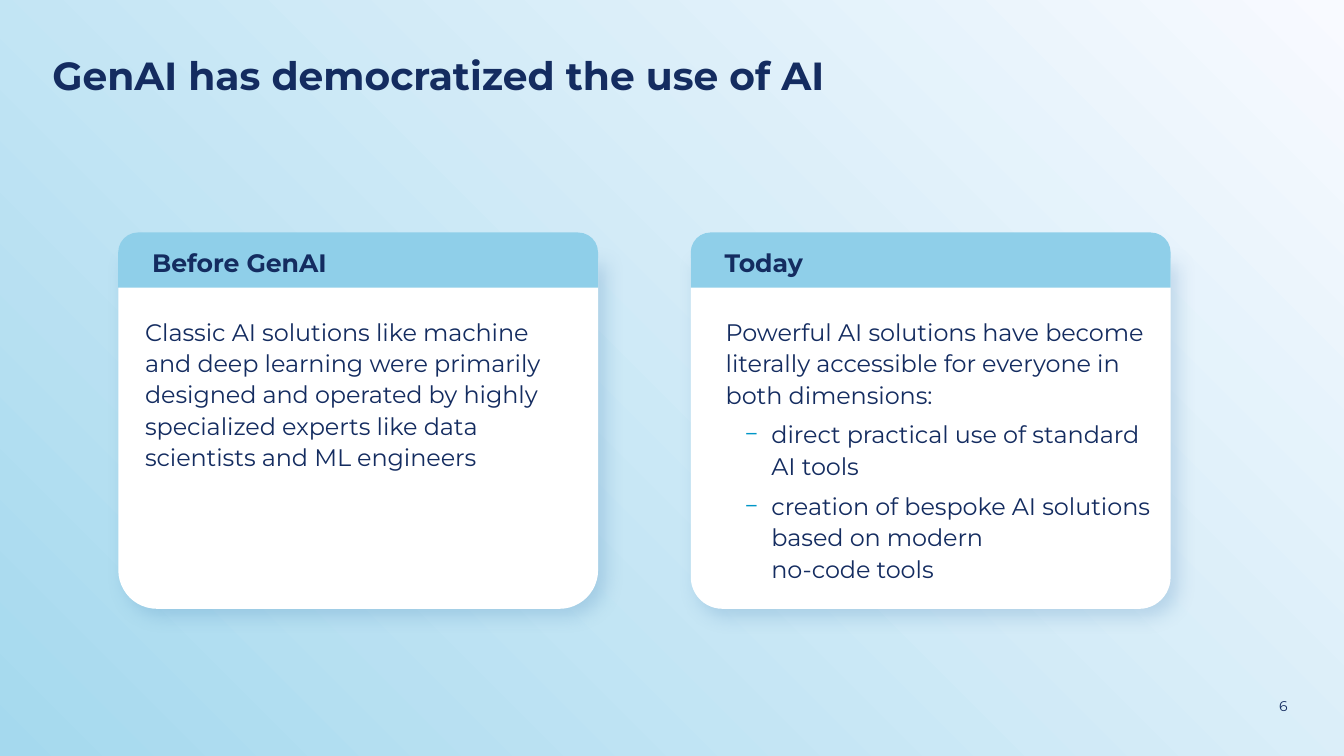
from dataclasses import dataclass

from lxml.etree import SubElement
from pptx import Presentation
from pptx.dml.color import RGBColor as RGB
from pptx.enum.shapes import MSO_SHAPE as Shape
from pptx.enum.text import MSO_ANCHOR as Anchor, PP_ALIGN as Align
from pptx.oxml import parse_xml
from pptx.oxml.ns import nsdecls, qn
from pptx.util import Inches, Pt


@dataclass(frozen=True)
class Theme:
    font: str = "Montserrat"
    ink: str = "142C60"
    band: str = "8FCFE9"
    card: str = "FFFFFF"
    bullet: str = "0096C7"
    shadow: str = "2166A4"
    sky: str = "A5D9EE"
    haze: str = "F8FAFF"
    title_size: float = 21
    heading_size: float = 13.5
    body_size: float = 12.75
    number_size: float = 7.5


class SlideBuilder:
    def __init__(self, slide, theme):
        self.slide = slide
        self.theme = theme

    def background(self):
        fill = self.slide.background.fill
        fill.gradient()
        fill.gradient_angle = 45
        for stop, color in zip(fill.gradient_stops, (self.theme.sky, self.theme.haze)):
            stop.color.rgb = RGB.from_string(color)

    def style(self, paragraph, size, bold=False):
        font = paragraph.font
        font.name = self.theme.font
        font.size = Pt(size)
        font.bold = bold
        font.color.rgb = RGB.from_string(self.theme.ink)

    def text(self, box, content, size, bold=False, align=Align.LEFT, anchor=Anchor.TOP):
        frame = self.frame(box, anchor)
        paragraph = frame.paragraphs[0]
        paragraph.text = content
        paragraph.alignment = align
        self.style(paragraph, size, bold)

    def frame(self, box, anchor=Anchor.TOP):
        """Add a wrapping text box without insets."""
        frame = self.slide.shapes.add_textbox(*map(Inches, box)).text_frame
        frame.word_wrap = True
        frame.vertical_anchor = anchor
        frame.margin_left = frame.margin_right = 0
        frame.margin_top = frame.margin_bottom = 0
        return frame

    def body(self, box, intro, points):
        frame = self.frame(box)
        for index, content in enumerate((intro, *points)):
            paragraph = frame.add_paragraph() if index else frame.paragraphs[0]
            paragraph.text = content
            paragraph.line_spacing = 1.1
            if index:
                paragraph.space_before = Pt(4.5)
                self.dash(paragraph)
            self.style(paragraph, self.theme.body_size)

    def dash(self, paragraph):
        properties = paragraph._p.get_or_add_pPr()
        properties.set("marL", str(Inches(0.34)))
        properties.set("indent", str(Inches(-0.2)))
        color = SubElement(properties, qn("a:buClr"))
        SubElement(color, qn("a:srgbClr"), val=self.theme.bullet)
        SubElement(properties, qn("a:buFont"), typeface=self.theme.font)
        SubElement(properties, qn("a:buChar"), char="−")

    def shape(self, kind, box, adjustments, fill=None):
        shape = self.slide.shapes.add_shape(kind, *map(Inches, box))
        shape.shadow.inherit = False
        shape.line.fill.background()
        for index, value in enumerate(adjustments):
            shape.adjustments[index] = value
        if fill:
            shape.fill.solid()
            shape.fill.fore_color.rgb = RGB.from_string(fill)
        else:
            shape.fill.background()
        return shape

    def drop_shadow(self, shape):
        effects = shape._element.spPr.find(qn("a:effectLst"))
        effects.append(parse_xml(
            f'<a:outerShdw {nsdecls("a")} blurRad="{Pt(10)}" dist="{Pt(5)}" '
            f'dir="2700000" algn="tl" rotWithShape="0">'
            f'<a:srgbClr val="{self.theme.shadow}"><a:alpha val="20000"/></a:srgbClr>'
            f'</a:outerShdw>'))

    def card(self, left, heading, corner):
        top, width = 1.73, 3.57
        panel = self.shape(Shape.ROUND_2_SAME_RECTANGLE, (left, 1.92, width, 2.61),
                           (corner, 0), self.theme.card)
        panel.rotation = 180
        self.drop_shadow(panel)
        self.shape(Shape.ROUND_2_SAME_RECTANGLE, (left, top, width, 0.41),
                   (0.36, 0), self.theme.band)
        label = self.shape(Shape.ROUNDED_RECTANGLE, (left + 0.09, top, width, 0.44), (0.5,))
        label.text_frame.vertical_anchor = Anchor.MIDDLE
        paragraph = label.text_frame.paragraphs[0]
        paragraph.text = heading
        paragraph.alignment = Align.LEFT
        self.style(paragraph, self.theme.heading_size, bold=True)


CARDS = (
    (0.88, "Before GenAI", 0.11, (1.08, 2.34, 3.23, 1.17),
     "Classic AI solutions like machine and deep learning were primarily designed "
     "and operated by highly specialized experts like data scientists and ML engineers",
     ()),
    (5.14, "Today", 0.09, (5.4, 2.34, 3.17, 2.01),
     "Powerful AI solutions have become literally accessible for everyone "
     "in both dimensions:",
     ("direct practical use of standard AI tools",
      "creation of bespoke AI solutions based on modern \vno-code tools")),
)


def main():
    deck = Presentation()
    deck.slide_width = Inches(10)
    deck.slide_height = deck.slide_width * 9 // 16
    theme = Theme()
    builder = SlideBuilder(deck.slides.add_slide(deck.slide_layouts[6]), theme)
    builder.background()
    builder.text((0.39, 0.38, 7.83, 0.35), "GenAI has democratized the use of AI",
                 theme.title_size, bold=True)
    for left, heading, corner, body_box, intro, points in CARDS:
        builder.card(left, heading, corner)
        builder.body(body_box, intro, points)
    builder.text((8.93, 5.19, 0.65, 0.13), "6", theme.number_size,
                 align=Align.RIGHT, anchor=Anchor.MIDDLE)
    deck.save("out.pptx")


if __name__ == "__main__":
    main()
